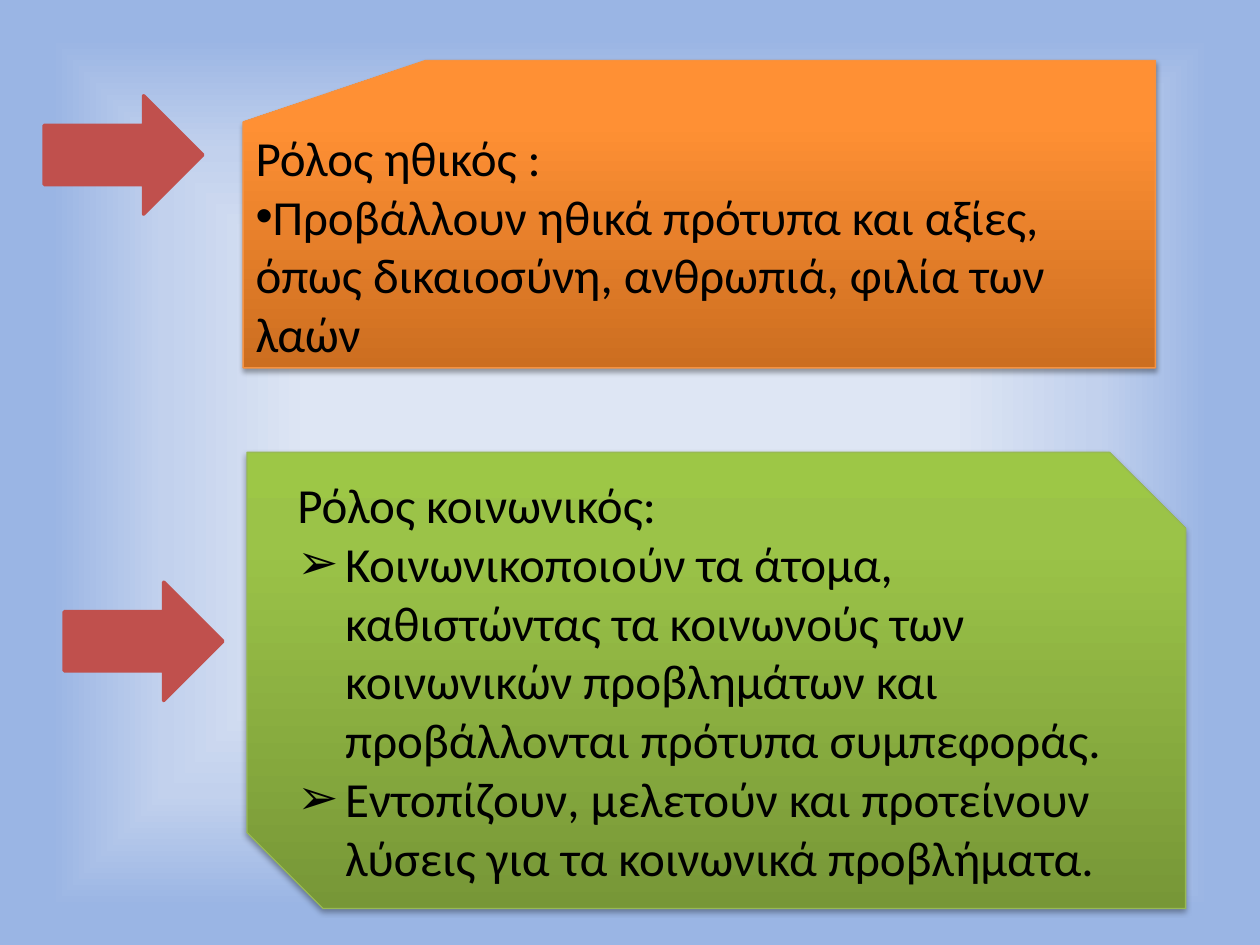
from lxml import etree
from pptx import Presentation
from pptx.dml.color import RGBColor
from pptx.enum.shapes import MSO_SHAPE
from pptx.enum.text import MSO_ANCHOR, PP_ALIGN
from pptx.oxml import parse_xml
from pptx.oxml.ns import nsdecls, qn
from pptx.util import Emu, Inches, Pt

ARROW = MSO_SHAPE.RIGHT_ARROW
PUNCHED_CARD = MSO_SHAPE.FLOWCHART_CARD
SNIPPED_CARD = MSO_SHAPE.SNIP_2_DIAG_RECTANGLE
MIDDLE = MSO_ANCHOR.MIDDLE
LEFT = PP_ALIGN.LEFT

COLOURS = {
    "text": "000000",
    "shadow": "000000",
    "arrow": "C0504D",
    "moral_edge": "F69240",
    "social_edge": "98B955",
}
BACKDROP_STOPS = [(4, "E1E8F5"), (37, "DEE6F4"), (68, "C2D1ED"), (92, "9AB5E4")]
MORAL_STOPS = [(0, "CC6E20"), (80, "FF9034"), (100, "FF9136")]
SOCIAL_STOPS = [(0, "779737"), (80, "9BC348"), (100, "9DC746")]

UPWARD = '<a:lin ang="16200000" scaled="0"/>'
FROM_CENTRE = ('<a:path path="shape"><a:fillToRect l="50000" t="50000" '
               'r="50000" b="50000"/></a:path>')


class RoleSlide:
    """Style and current slide; places are percentages of the slide's size."""

    font = "Calibri"
    text_size = Pt(28)
    hanging = Inches(0.38)

    def __init__(self, deck):
        self.width, self.height = deck.slide_width, deck.slide_height
        self.slide = deck.slides.add_slide(deck.slide_layouts[6])

    @staticmethod
    def colour(name):
        return RGBColor.from_string(COLOURS[name])

    @staticmethod
    def gradient(holder, stops, direction):
        """Swap the solid fill inside holder for a gradient."""
        marks = "".join(
            f'<a:gs pos="{share * 1000}"><a:srgbClr val="{value}"/></a:gs>'
            for share, value in stops)
        solid = holder.find(qn("a:solidFill"))
        holder.replace(solid, parse_xml(
            f'<a:gradFill {nsdecls("a")} rotWithShape="1">'
            f'<a:gsLst>{marks}</a:gsLst>{direction}</a:gradFill>'))

    def backdrop(self, stops):
        self.slide.background.fill.solid()
        holder = next(self.slide.element.iter(qn("p:bgPr")))
        self.gradient(holder, stops, FROM_CENTRE)

    def shape(self, preset, place, fill, edge, edge_width):
        left, top, width, height = place
        shape = self.slide.shapes.add_shape(
            preset,
            Emu(int(self.width * left / 100)), Emu(int(self.height * top / 100)),
            Emu(int(self.width * width / 100)), Emu(int(self.height * height / 100)))
        shape.shadow.inherit = False
        shape.fill.solid()
        shape.fill.fore_color.rgb = self.colour(fill)
        shape.line.color.rgb = self.colour(edge)
        shape.line.width = Pt(edge_width)
        return shape

    def arrow(self, left, top):
        self.shape(ARROW, (left, top, 12.6, 12.53), "arrow", "arrow", 2)

    def drop_shadow(self, shape):
        effects = shape.element.spPr.find(qn("a:effectLst"))
        effects.append(parse_xml(
            f'<a:outerShdw {nsdecls("a")} blurRad="{Pt(3.1)}" dist="{Pt(1.8)}" '
            f'dir="5400000" rotWithShape="0"><a:srgbClr val="{COLOURS["shadow"]}">'
            '<a:alpha val="35000"/></a:srgbClr></a:outerShdw>'))

    def card(self, preset, place, stops, edge, heading, points, bullet, hanging=0):
        card = self.shape(preset, place, edge, edge, 0.75)
        self.gradient(card.element.spPr, stops, UPWARD)
        self.drop_shadow(card)
        frame = card.text_frame
        frame.word_wrap = True
        frame.vertical_anchor = MIDDLE
        self.add_wording(frame.paragraphs[0], heading)
        for point in points:
            paragraph = frame.add_paragraph()
            self.add_wording(paragraph, point)
            self.bullet(paragraph, bullet, hanging)

    def add_wording(self, paragraph, wording):
        paragraph.alignment = LEFT
        run = paragraph.add_run()
        run.text = wording
        run.font.name = self.font
        run.font.size = self.text_size
        run.font.color.rgb = self.colour("text")

    @staticmethod
    def bullet(paragraph, symbol, hanging):
        properties = paragraph._p.get_or_add_pPr()
        properties.set("marL", str(hanging))
        properties.set("indent", str(-hanging))
        etree.SubElement(properties, qn("a:buFont"), typeface="Arial")
        etree.SubElement(properties, qn("a:buChar"), char=symbol)


def main():
    deck = Presentation()
    deck.slide_width, deck.slide_height = Inches(10), Inches(7.5)
    roles = RoleSlide(deck)
    roles.backdrop(BACKDROP_STOPS)
    roles.arrow(3.5, 10.13)
    roles.arrow(5.1, 61.6)
    roles.card(
        PUNCHED_CARD, (19.3, 6.4, 72.4, 32.53), MORAL_STOPS, "moral_edge",
        "Ρόλος ηθικός :",
        ["Προβάλλουν ηθικά πρότυπα και αξίες, όπως δικαιοσύνη, ανθρωπιά, "
         "φιλία των λαών"],
        "•")
    roles.card(
        SNIPPED_CARD, (19.6, 47.87, 74.5, 48.27), SOCIAL_STOPS, "social_edge",
        "Ρόλος κοινωνικός:",
        ["Κοινωνικοποιούν τα άτομα, καθιστώντας τα κοινωνούς των κοινωνικών "
         "προβλημάτων και προβάλλονται πρότυπα συμπεφοράς.",
         "Εντοπίζουν, μελετούν και προτείνουν λύσεις για τα κοινωνικά "
         "προβλήματα."],
        "➢", roles.hanging)
    deck.save("out.pptx")


if __name__ == "__main__":
    main()
